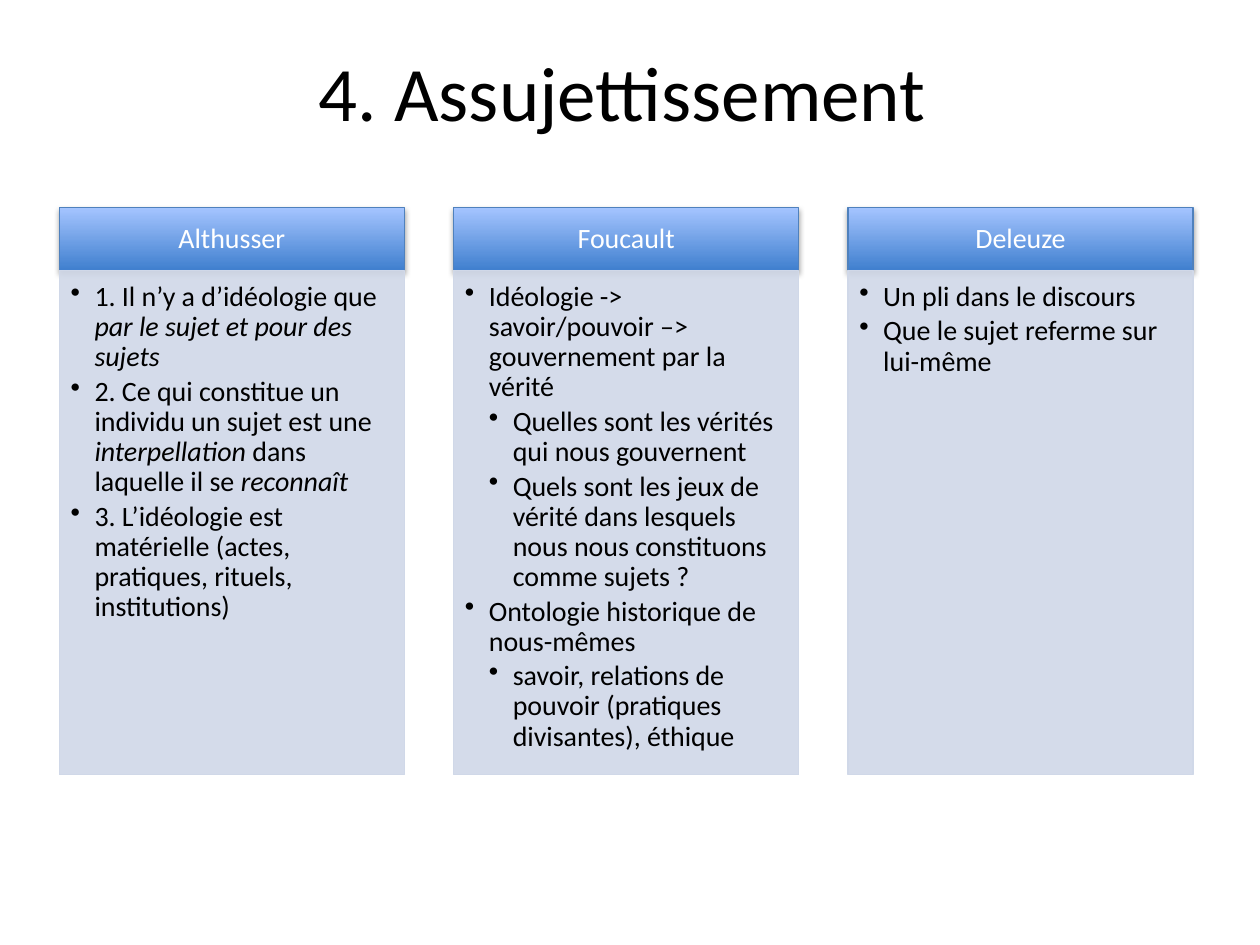
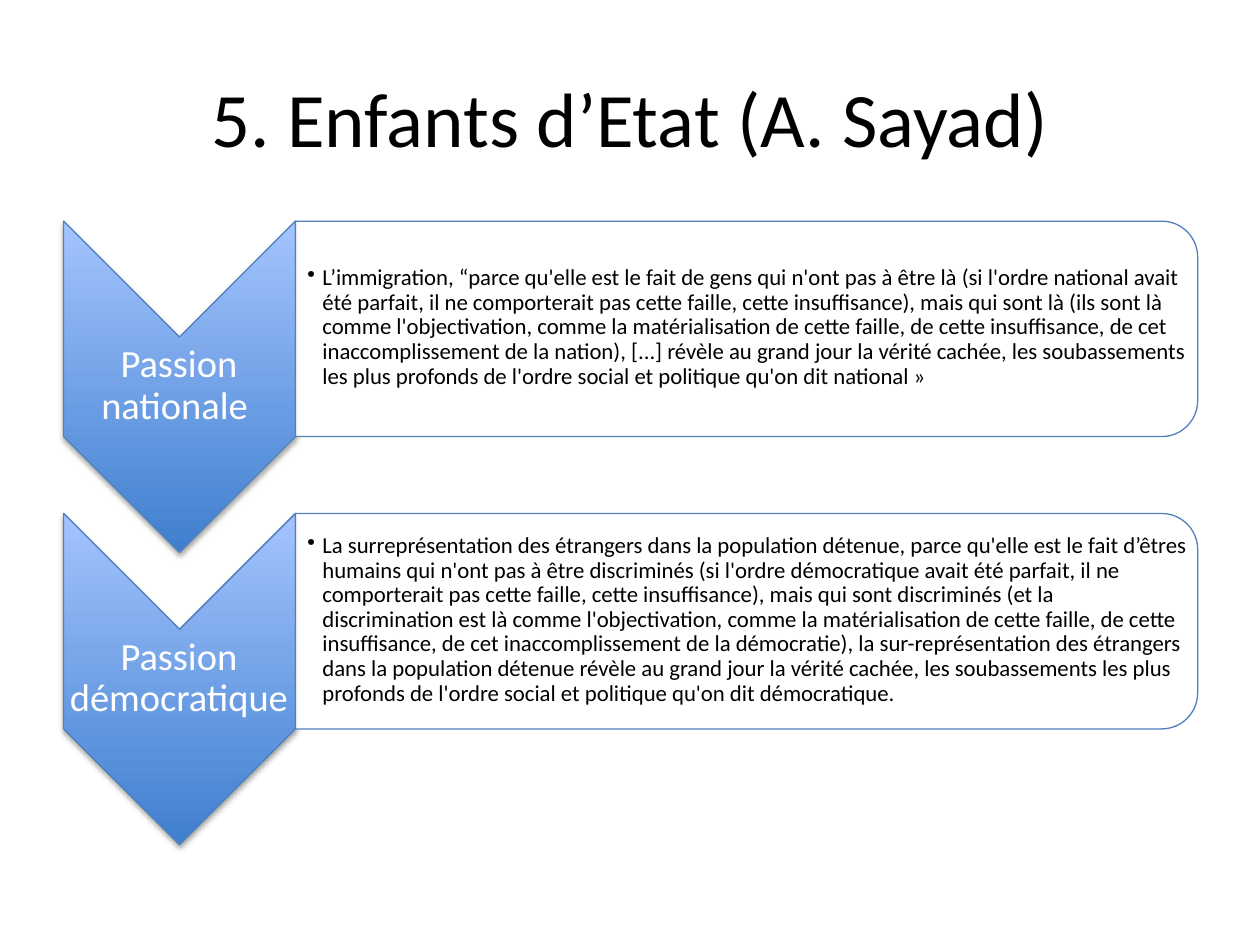
"""Build two slides on subjection and on the children of the State."""
from dataclasses import dataclass

from lxml.etree import SubElement
from pptx import Presentation
from pptx.dml.color import RGBColor
from pptx.enum.shapes import MSO_SHAPE
from pptx.enum.text import MSO_ANCHOR, PP_ALIGN
from pptx.oxml.ns import qn
from pptx.util import Inches, Pt


@dataclass(frozen=True)
class Theme:
    font: str = "Calibri"
    black: str = "000000"
    white: str = "FFFFFF"
    outline: str = "4F81BD"
    panel: str = "D0D8E8"
    gradient: tuple = ("3F7FCE", "A4C4FF")
    title_size: int = 44
    column_size: int = 16
    passion_size: int = 22
    quote_size: int = 13


theme = Theme()


def write(box, paragraphs, size, color, margins, anchor, align=PP_ALIGN.LEFT, spacing=0.9, indent=0):
    """Fill a box with (level, text) paragraphs; underscores enclose italics."""
    frame = box.text_frame
    sides = ("margin_left", "margin_top", "margin_right", "margin_bottom")
    frame_format = {side: Inches(margin) for side, margin in zip(sides, margins)}
    frame_format.update(word_wrap=True, vertical_anchor=anchor)
    for name, value in frame_format.items():
        setattr(frame, name, value)
    for index, (level, text) in enumerate(paragraphs):
        para = frame.add_paragraph() if index else frame.paragraphs[0]
        para_format = {"alignment": align, "line_spacing": spacing, "space_after": Pt(0.15 * size)}
        for name, value in para_format.items():
            setattr(para, name, value)
        if indent:
            properties = para._p.get_or_add_pPr()
            properties.set("marL", str(Inches(indent * level)))
            properties.set("indent", str(-Inches(indent)))
            SubElement(properties, qn("a:buChar"), char="•")
        for position, part in enumerate(text.split("_")):
            if part:
                span = para.add_run()
                span.text = part
                span_format = {"name": theme.font, "size": Pt(size), "italic": position % 2 == 1}
                for name, value in span_format.items():
                    setattr(span.font, name, value)
                span.font.color.rgb = RGBColor.from_string(color)


def add_block(page, kind, place, line, fill=None, rotation=0):
    """Add a translucent block, or a shaded one with a shadow when no fill is given."""
    block = page.shapes.add_shape(kind, *map(Inches, place))
    block.rotation = rotation
    block.shadow.inherit = False
    block.line.color.rgb = RGBColor.from_string(line)
    block.line.width = Pt(0.75)
    properties = block._element.spPr
    if fill:
        block.fill.solid()
        block.fill.fore_color.rgb = RGBColor.from_string(fill)
        fill_color = properties.find(qn("a:solidFill")).find(qn("a:srgbClr"))
        SubElement(fill_color, qn("a:alpha"), val="90000")
        return block
    block.fill.gradient()
    block.fill.gradient_angle = 90
    for stop, color in zip(block.fill.gradient_stops, theme.gradient):
        stop.color.rgb = RGBColor.from_string(color)
    properties.find(qn("a:gradFill")).set("rotWithShape", "0")
    shadow = SubElement(
        properties.find(qn("a:effectLst")), qn("a:outerShdw"), blurRad=str(Pt(3.1)),
        dist=str(Pt(1.8)), dir="5400000", rotWithShape="0",
    )
    shadow_color = SubElement(shadow, qn("a:srgbClr"), val=theme.black)
    SubElement(shadow_color, qn("a:alpha"), val="35000")
    return block


columns = [
    ("Althusser", [
        (1, "1. Il n’y a d’idéologie que _par le sujet et pour des sujets_"),
        (1, "2. Ce qui constitue un individu un sujet est une _interpellation_ dans laquelle il se _reconnaît_"),
        (1, "3. L’idéologie est matérielle (actes, pratiques, rituels, institutions)"),
    ]),
    ("Foucault", [
        (1, "Idéologie -> savoir/pouvoir –> gouvernement par la vérité"),
        (2, "Quelles sont les vérités qui nous gouvernent"),
        (2, "Quels sont les jeux de vérité dans lesquels nous nous constituons comme sujets ?"),
        (1, "Ontologie historique de nous-mêmes"),
        (2, "savoir, relations de pouvoir (pratiques divisantes), éthique"),
    ]),
    ("Deleuze", [
        (1, "Un pli dans le discours"),
        (1, "Que le sujet referme sur lui-même"),
    ]),
]

passions = [
    ("Passion nationale ",
     "L’immigration, “parce qu'elle est le fait de gens qui n'ont pas à être là "
     "(si l'ordre national avait été parfait, il ne comporterait pas cette faille, "
     "cette insuffisance), mais qui sont là (ils sont là comme l'objectivation, "
     "comme la matérialisation de cette faille, de cette insuffisance, de cet "
     "inaccomplissement de la nation), [...] révèle au grand jour la vérité cachée, "
     "les soubassements les plus profonds de l'ordre social et politique qu'on dit national »"),
    ("Passion démocratique",
     "La surreprésentation des étrangers dans la population détenue, parce qu'elle est "
     "le fait d’êtres humains qui n'ont pas à être discriminés (si l'ordre démocratique "
     "avait été parfait, il ne comporterait pas cette faille, cette insuffisance), mais "
     "qui sont discriminés (et la discrimination est là comme l'objectivation, comme la "
     "matérialisation de cette faille, de cette insuffisance, de cet inaccomplissement de "
     "la démocratie), la sur-représentation des étrangers dans la population détenue "
     "révèle au grand jour la vérité cachée, les soubassements les plus profonds de "
     "l'ordre social et politique qu'on dit démocratique."),
]

titles = [
    ("4. Assujettissement", (0.43, 0.25, 9.02, 0.94)),
    ("5. Enfants d’Etat (A. Sayad)", (0.5, 0.3, 9, 1.25)),
]

deck = Presentation()
deck.slide_width, deck.slide_height = Inches(10), Inches(7.5)
pages = []
for title, place in titles:
    page = deck.slides.add_slide(deck.slide_layouts[6])
    box = page.shapes.add_textbox(*map(Inches, place))
    write(box, [(1, title)], theme.title_size, theme.black, (0.1, 0.05, 0.1, 0.05),
          MSO_ANCHOR.MIDDLE, PP_ALIGN.CENTER, spacing=1.0)
    pages.append(page)
columns_page, passions_page = pages

for index, (author, ideas) in enumerate(columns):
    left = 0.47 + 3.13 * index
    header = add_block(columns_page, MSO_SHAPE.RECTANGLE, (left, 1.65, 2.74, 0.5), theme.outline)
    write(header, [(1, author)], theme.column_size, theme.white, (0.12, 0.07, 0.12, 0.07),
          MSO_ANCHOR.MIDDLE, PP_ALIGN.CENTER)
    panel = add_block(columns_page, MSO_SHAPE.RECTANGLE, (left, 2.15, 2.74, 4), theme.panel, theme.panel)
    write(panel, ideas, theme.column_size, theme.black, (0.09, 0.09, 0.12, 0.14),
          MSO_ANCHOR.TOP, indent=0.19)

for index, (passion, quote) in enumerate(passions):
    top = 1.75 + 2.32 * index
    add_block(passions_page, MSO_SHAPE.CHEVRON, (0.11, top + 0.4, 2.63, 1.84), theme.outline, rotation=90)
    label = passions_page.shapes.add_textbox(*map(Inches, (0.5, top + 0.92, 1.84, 0.79)))
    write(label, [(1, passion)], theme.passion_size, theme.white, (0.02,) * 4,
          MSO_ANCHOR.MIDDLE, PP_ALIGN.CENTER)
    add_block(passions_page, MSO_SHAPE.ROUND_2_SAME_RECTANGLE, (5.07, top - 2.72, 1.71, 7.16),
              theme.outline, theme.white, rotation=90)
    box = passions_page.shapes.add_textbox(*map(Inches, (2.34, top + 0.08, 7.08, 1.54)))
    write(box, [(1, quote)], theme.quote_size, theme.black, (0.1, 0.01, 0.01, 0.01),
          MSO_ANCHOR.MIDDLE, indent=0.12)

deck.save("out.pptx")
